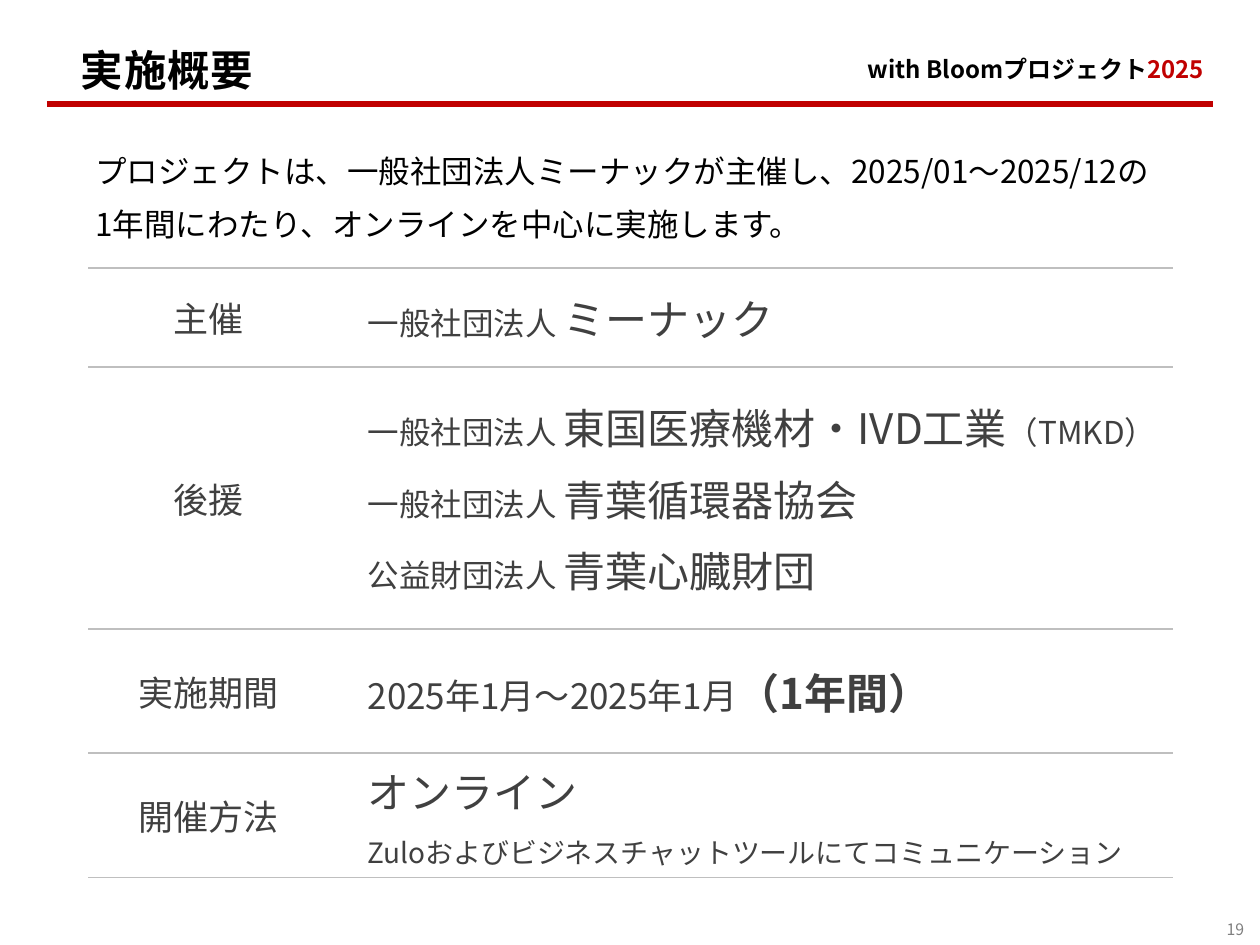
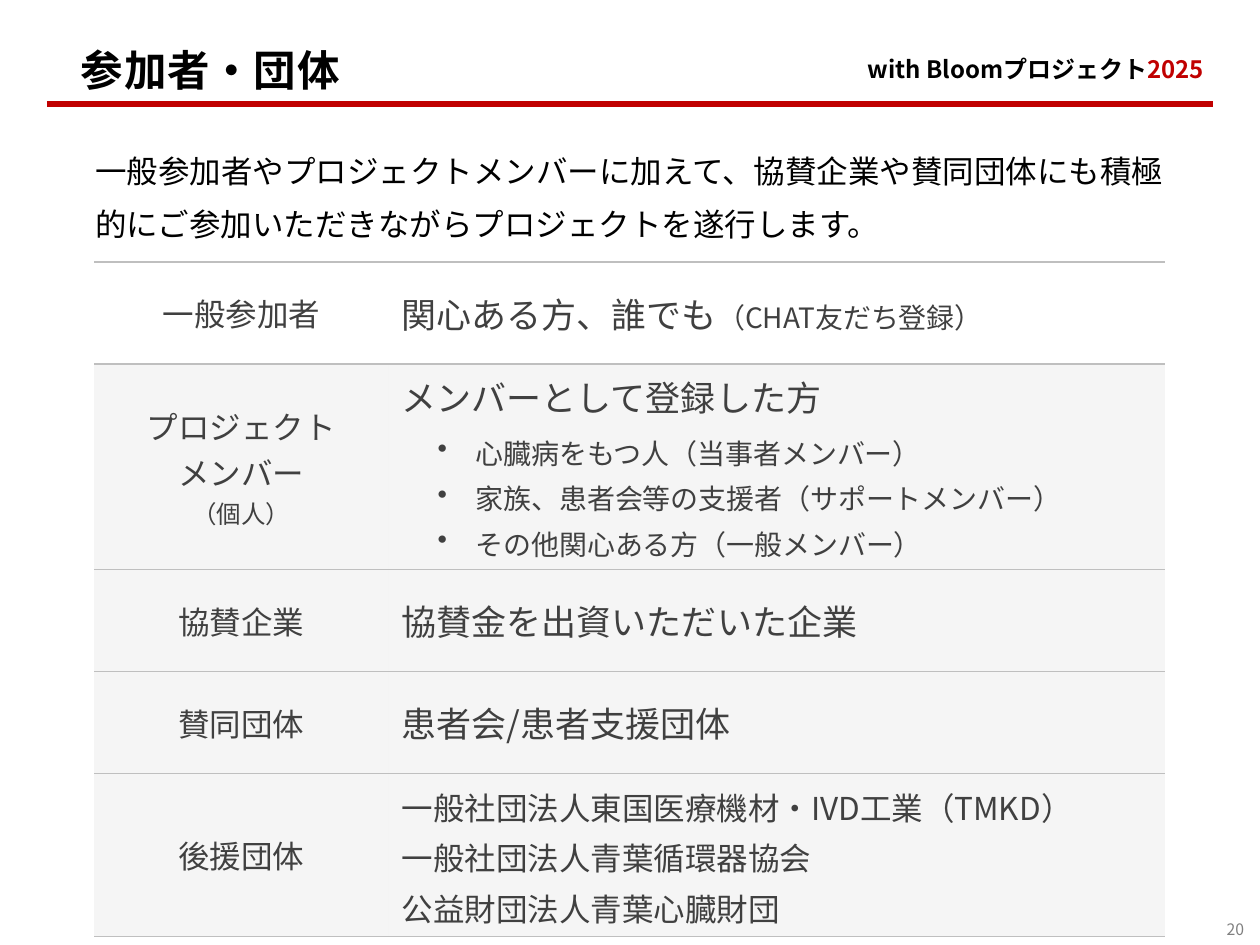
from lxml import etree
from pptx import Presentation
from pptx.dml.color import RGBColor
from pptx.enum.shapes import MSO_CONNECTOR
from pptx.enum.text import MSO_ANCHOR, MSO_AUTO_SIZE, PP_ALIGN
from pptx.oxml.ns import qn
from pptx.util import Emu, Pt

LEFT, CENTER, RIGHT = PP_ALIGN.LEFT, PP_ALIGN.CENTER, PP_ALIGN.RIGHT
TOP, MIDDLE = MSO_ANCHOR.TOP, MSO_ANCHOR.MIDDLE
FIXED, GROW = MSO_AUTO_SIZE.NONE, MSO_AUTO_SIZE.SHAPE_TO_FIT_TEXT
STRAIGHT = MSO_CONNECTOR.STRAIGHT

FONT = "Noto Sans CJK JP"
BLACK, RED, TEXT, GRAY = "000000", "C00000", "404040", "808080"
WHITE, PALE, BORDER = "FFFFFF", "F2F2F2", "BFBFBF"
EMU_PER_PX = 914400 / 126

PROJECT = [("with Bloomプロジェクト", 13.7, BLACK, True), ("2025", 13.7, RED, True)]
FIRST = {"indent": 25}
FIRST_AFTER = {"indent": 25, "space_after": Pt(6)}
BULLET = {"margin": 74, "indent": -38, "bullet": "•", "space_after": Pt(3)}
LOOSE = {"line_spacing": 1.1}

SLIDES = [
    {
        "title": "実施概要", "title_width": 411, "number": "19",
        "intro": "プロジェクトは、一般社団法人ミーナックが主催し、2025/01～2025/12"
                 "の1年間にわたり、オンラインを中心に実施します。",
        "place": (88, 268), "columns": (242, 843), "heights": (99, 223, 124, 124),
        "label_size": 20, "fills": [(None, None)] * 4,
        "rows": [
            (["主催"], [([("一般社団法人 ", 18), ("ミーナック", 24)], FIRST)]),
            (["後援"], [
                ([("一般社団法人 ", 18), ("東国医療機材・IVD工業", 24), ("（TMKD）", 18)], FIRST_AFTER),
                ([("一般社団法人 ", 18), ("青葉循環器協会", 24)], FIRST_AFTER),
                ([("公益財団法人 ", 18), ("青葉心臓財団", 24)], FIRST_AFTER),
            ]),
            (["実施期間"], [([("2025年1月～2025年1月", 20), ("（1年間）", 24, TEXT, True)], FIRST)]),
            (["開催方法"], [
                ([("オンライン", 24)], FIRST),
                ([("Zuloおよびビジネスチャットツールにてコミュニケーション", 16)],
                 {"indent": 25, "space_before": Pt(6)}),
            ]),
        ],
    },
    {
        "title": "参加者・団体", "title_width": 353, "number": "20",
        "intro": "一般参加者やプロジェクトメンバーに加えて、協賛企業や賛同団体にも積極的に"
                 "ご参加いただきながらプロジェクトを遂行します。",
        "place": (94, 262), "columns": (295, 776), "heights": (102, 184, 102, 102, 136),
        "label_size": 18, "fills": [(None, WHITE)] + [(PALE, PALE)] * 4,
        "rows": [
            (["一般参加者"], [([("関心ある方、誰でも", 20), ("（CHAT友だち登録）", 16)],
                          {"space_after": Pt(3)})]),
            (["プロジェクト", "メンバー", ("（個人）", 14)], [
                ([("メンバーとして登録した方", 20)], {"space_after": Pt(6)}),
                ([("心臓病をもつ人（当事者メンバー）", 16)], BULLET),
                ([("家族、患者会等の支援者（サポートメンバー）", 16)], BULLET),
                ([("その他関心ある方（一般メンバー）", 16)], BULLET),
            ]),
            (["協賛企業"], [([("協賛金を出資いただいた企業", 20)], {})]),
            (["賛同団体"], [([("患者会/患者支援団体", 20)], {})]),
            (["後援団体"], [
                ([("一般社団法人東国医療機材・IVD工業（TMKD）", 18)], LOOSE),
                ([("一般社団法人青葉循環器協会", 18)], LOOSE),
                ([("公益財団法人青葉心臓財団", 18)], LOOSE),
            ]),
        ],
    },
]


def px(value):
    return Emu(round(value * EMU_PER_PX))


def color(value):
    return RGBColor.from_string(value)


def apply(target, values):
    for name, value in values.items():
        setattr(target, name, value)


def add_run(paragraph, text, size, ink=TEXT, bold=False):
    run = paragraph.add_run()
    run.text = text
    apply(run.font, {"name": FONT, "size": Pt(size), "bold": bold})
    run.font.color.rgb = color(ink)
    properties = run.font._element
    etree.SubElement(properties, qn("a:ea"), typeface=FONT)
    return properties


def write(frame, paragraphs):
    for index, (runs, layout) in enumerate(paragraphs):
        paragraph = frame.add_paragraph() if index else frame.paragraphs[0]
        values = dict(layout)
        margin, indent = values.pop("margin", 0), values.pop("indent", 0)
        bullet = values.pop("bullet", None)
        apply(paragraph, values)
        properties = paragraph._p.get_or_add_pPr()
        properties.set("marL", str(px(margin)))
        properties.set("indent", str(px(indent)))
        if bullet:
            etree.SubElement(properties, qn("a:buChar"), char=bullet)
        for run in runs:
            add_run(paragraph, *run)


def set_frame(frame, anchor, size=FIXED, inset=False):
    apply(frame, {"word_wrap": True, "auto_size": size, "vertical_anchor": anchor})
    if inset:
        apply(frame, {"margin_left": px(15), "margin_right": px(15),
                      "margin_top": px(15), "margin_bottom": px(13)})


def add_text(slide, box, runs, layout, **frame_values):
    frame = slide.shapes.add_textbox(*map(px, box)).text_frame
    set_frame(frame, **frame_values)
    write(frame, [(runs, layout)])


def add_title(slide, text, width):
    title = slide.shapes.title
    apply(title, {"left": px(66), "top": px(37), "width": px(width), "height": px(63)})
    set_frame(title.text_frame, MIDDLE, inset=True)
    paragraph = title.text_frame.paragraphs[0]
    paragraph.alignment = LEFT
    add_run(paragraph, text, 24.3, BLACK, True).set("spc", "50")


def add_header_rule(slide, layout):
    rule = slide.shapes.add_connector(STRAIGHT, *map(px, (47, 104, 1213, 104)))
    rule.line.color.rgb = color(RED)
    rule.line.width = Pt(3)
    etree.SubElement(rule.element.spPr, qn("a:effectLst"))
    layout.shapes.element.append(rule.element)


def format_cell(cell, fill):
    cell.vertical_anchor = MIDDLE
    if fill:
        cell.fill.solid()
        cell.fill.fore_color.rgb = color(fill)
    else:
        cell.fill.background()
    properties = cell._tc.get_or_add_tcPr()
    if fill == PALE:
        tint = properties.find(".//" + qn("a:srgbClr"))
        etree.SubElement(tint, qn("a:alpha"), val="70000")
    for position, side in enumerate(("lnL", "lnR", "lnT", "lnB")):
        border = etree.Element(qn("a:" + side), w=str(Pt(1)))
        if side in ("lnT", "lnB"):
            paint = etree.SubElement(border, qn("a:solidFill"))
            etree.SubElement(paint, qn("a:srgbClr"), val=BORDER)
        else:
            etree.SubElement(border, qn("a:noFill"))
        properties.insert(position, border)


def add_overview(slide, content):
    columns, heights = content["columns"], content["heights"]
    box = (*content["place"], sum(columns), sum(heights))
    table = slide.shapes.add_table(len(heights), len(columns), *map(px, box)).table
    apply(table, {"first_row": False, "horz_banding": False})
    for column, width in zip(table.columns, columns):
        column.width = px(width)
    for row, height, (labels, details), fills in zip(
            table.rows, heights, content["rows"], content["fills"]):
        row.height = px(height)
        label_runs = [label if isinstance(label, tuple) else (label, content["label_size"])
                      for label in labels]
        label_paragraphs = [([run], {"alignment": CENTER}) for run in label_runs]
        for cell, paragraphs, fill in zip(row.cells, (label_paragraphs, details), fills):
            format_cell(cell, fill)
            write(cell.text_frame, paragraphs)


def main():
    deck = Presentation()
    apply(deck, {"slide_width": px(1260), "slide_height": px(945)})
    layout = deck.slide_layouts[5]
    for index, content in enumerate(SLIDES):
        slide = deck.slides.add_slide(layout)
        if index == 0:
            add_header_rule(slide, layout)
        add_title(slide, content["title"], content["title_width"])
        add_overview(slide, content)
        add_text(slide, (975, 911, 284, 35), [(content["number"], 9, GRAY)],
                 {"alignment": RIGHT}, anchor=MIDDLE, inset=True)
        add_text(slide, (779, 39, 437, 63), PROJECT,
                 {"alignment": RIGHT, "line_spacing": 0.9}, anchor=MIDDLE)
        add_text(slide, (83, 131, 1094, 111), [(content["intro"], 18, BLACK)],
                 {"line_spacing": 1.4}, anchor=TOP, size=GROW)
    deck.save("out.pptx")


if __name__ == "__main__":
    main()
